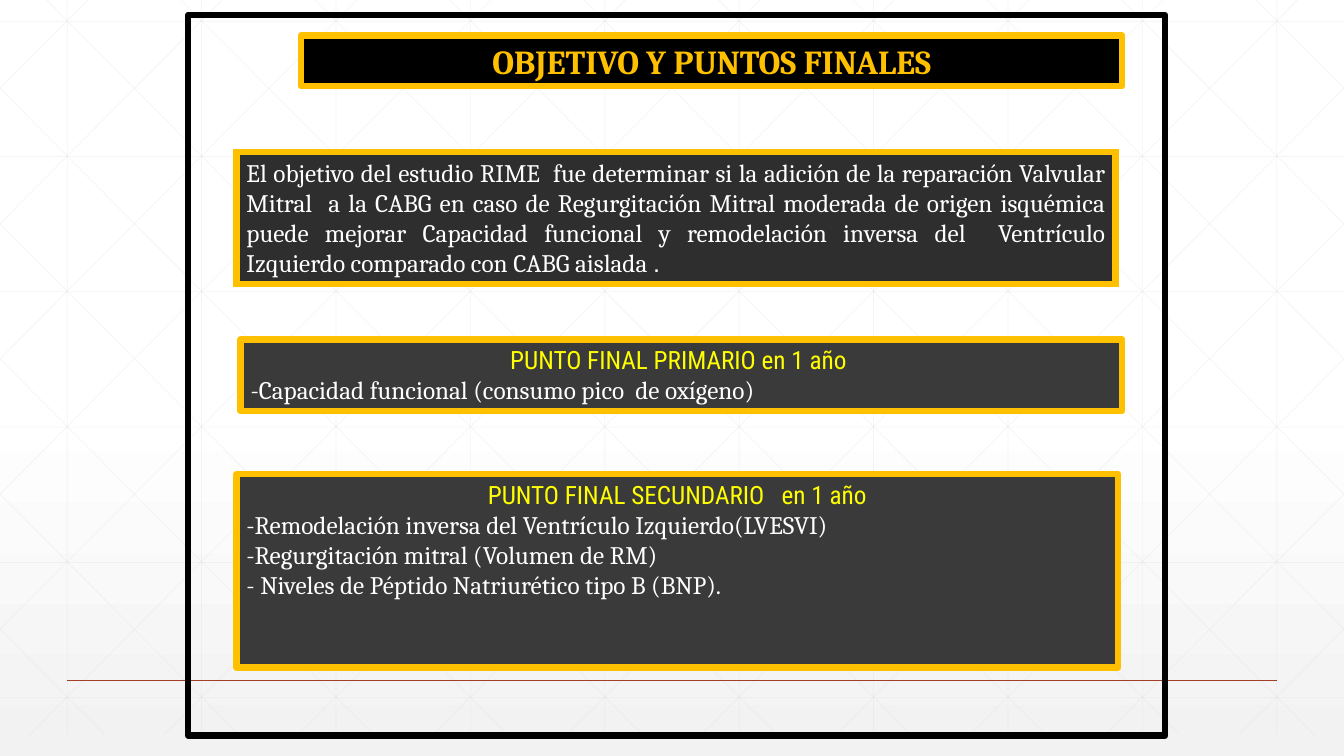
from copy import deepcopy

from lxml.etree import SubElement
from pptx import Presentation
from pptx.dml.color import RGBColor
from pptx.enum.shapes import MSO_CONNECTOR, MSO_SHAPE
from pptx.enum.text import MSO_ANCHOR, PP_ALIGN
from pptx.oxml.ns import qn
from pptx.util import Inches, Pt

WHITE = RGBColor(0xFF, 0xFF, 0xFF)
BLACK = RGBColor(0x00, 0x00, 0x00)
PALE_GRAY = RGBColor(0xF2, 0xF2, 0xF2)
GRID_GRAY = RGBColor(0xD9, 0xD9, 0xD9)
RUST = RGBColor(0xA4, 0x3F, 0x27)
GOLD = RGBColor(0xFF, 0xC0, 0x00)
YELLOW = RGBColor(0xFF, 0xFF, 0x00)
CHARCOAL = RGBColor(0x3A, 0x3A, 0x3A)
DARK_CHARCOAL = RGBColor(0x2D, 0x2E, 0x2D)

presentation = Presentation()
presentation.slide_width = Inches(13.33)
presentation.slide_height = Inches(7.5)
COLUMN = presentation.slide_width / 10
ROW = presentation.slide_height / 10
slide = presentation.slides.add_slide(presentation.slide_layouts[6])


def add_line(start, end, color, width, opacity=100):
    line = slide.shapes.add_connector(
        MSO_CONNECTOR.STRAIGHT,
        int(start[0] * COLUMN), int(start[1] * ROW),
        int(end[0] * COLUMN), int(end[1] * ROW),
    )
    line.line.color.rgb = color
    line.line.width = Pt(width)
    properties = line._element.spPr
    SubElement(properties, qn("a:effectLst"))
    if opacity < 100:
        color_node = properties.find(".//" + qn("a:srgbClr"))
        SubElement(color_node, qn("a:alpha")).set("val", str(opacity * 1000))


def add_text(paragraph, text, font="Cambria", size=18, color=WHITE, bold=False):
    run = paragraph.add_run()
    run.text = text
    run.font.name = font
    run.font.size = Pt(size)
    run.font.color.rgb = color
    run.font.bold = bold


background = slide.background.fill
background.gradient()
background.gradient_angle = 270
first_stop = background.gradient_stops[0]._gs
first_stop.addnext(deepcopy(first_stop))
for stop, position, color in zip(
    background.gradient_stops, (0, 0.53, 1), (WHITE, WHITE, PALE_GRAY)
):
    stop.position = position
    stop.color.rgb = color

GRID_TOP, GRID_BOTTOM = -0.28, 9.72
GRID_STYLE = {"color": GRID_GRAY, "width": 0.5, "opacity": 25}
DIAGONAL_RUN = 5.59
for index in range(10):
    add_line((index + 0.5, GRID_TOP), (index + 0.5, GRID_BOTTOM), **GRID_STYLE)
for index in range(6):
    level = 0.28 + 1.79 * index
    add_line((0, level), (10, level), **GRID_STYLE)
for index in range(-5, 10):
    top_x = index + 0.19
    left, right = max(top_x, 0), min(top_x + DIAGONAL_RUN, 10)
    upper, lower = [GRID_TOP + (x - top_x) / DIAGONAL_RUN * 10 for x in (left, right)]
    add_line((left, upper), (right, lower), **GRID_STYLE)
    add_line((10 - left, upper), (10 - right, lower), **GRID_STYLE)
add_line((0.5, 9), (9.5, 9), RUST, 1)

HEADING = {"font": "Roboto Condensed", "color": YELLOW}
CENTER, LEFT, JUSTIFY = PP_ALIGN.CENTER, PP_ALIGN.LEFT, PP_ALIGN.JUSTIFY
boxes = [
    ((1.4, 0.2, 7.27, 9.53), None, BLACK, []),
    ((2.24, 0.47, 6.11, 0.67), BLACK, GOLD, [
        (CENTER, [("OBJETIVO Y PUNTOS FINALES", {"size": 24, "color": GOLD, "bold": True})]),
    ]),
    ((1.79, 4.49, 6.56, 0.95), CHARCOAL, GOLD, [
        (CENTER, [("PUNTO FINAL PRIMARIO en 1 año ", HEADING)]),
        (LEFT, [("-Capacidad funcional (consumo pico  de oxígeno)", {})]),
    ]),
    ((1.76, 6.27, 6.56, 2.56), CHARCOAL, GOLD, [
        (CENTER, [("PUNTO FINAL SECUNDARIO   en 1 año", HEADING)]),
        (LEFT, [("-Remodelación inversa del Ventrículo Izquierdo(LVESVI)", {})]),
        (LEFT, [("-Regurgitación mitral (Volumen de RM)", {})]),
        (LEFT, [("- Niveles de Péptido Natriurético tipo B (BNP).", {})]),
    ]),
    ((1.76, 2.01, 6.54, 1.75), DARK_CHARCOAL, GOLD, [
        (JUSTIFY, [
            ("El objetivo del estudio RIME  fue determinar si la adición de la "
             "reparación Valvular Mitral  a la CABG en caso de Regurgitación Mitral "
             "moderada de origen isquémica puede mejorar Capacidad funcional y "
             "remodelación inversa del  Ventrículo Izquierdo comparado con CABG "
             "aislada ", {}),
            (".", {"font": "Arial"}),
        ]),
    ]),
]
for (left, top, width, height), fill, outline, paragraphs in boxes:
    shape = slide.shapes.add_shape(
        MSO_SHAPE.RECTANGLE, int(left * COLUMN), int(top * ROW),
        int(width * COLUMN), int(height * ROW),
    )
    shape.shadow.inherit = False
    shape.line.color.rgb = outline
    shape.line.width = Pt(4.5)
    if fill is None:
        shape.fill.background()
    else:
        shape.fill.solid()
        shape.fill.fore_color.rgb = fill
    if fill == DARK_CHARCOAL:
        SubElement(shape.line._ln, qn("a:miter")).set("lim", "800000")
    frame = shape.text_frame
    frame.word_wrap = True
    frame.vertical_anchor = MSO_ANCHOR.TOP
    for index, (alignment, runs) in enumerate(paragraphs):
        paragraph = frame.add_paragraph() if index else frame.paragraphs[0]
        paragraph.alignment = alignment
        for text, text_format in runs:
            add_text(paragraph, text, **text_format)

presentation.save("out.pptx")
